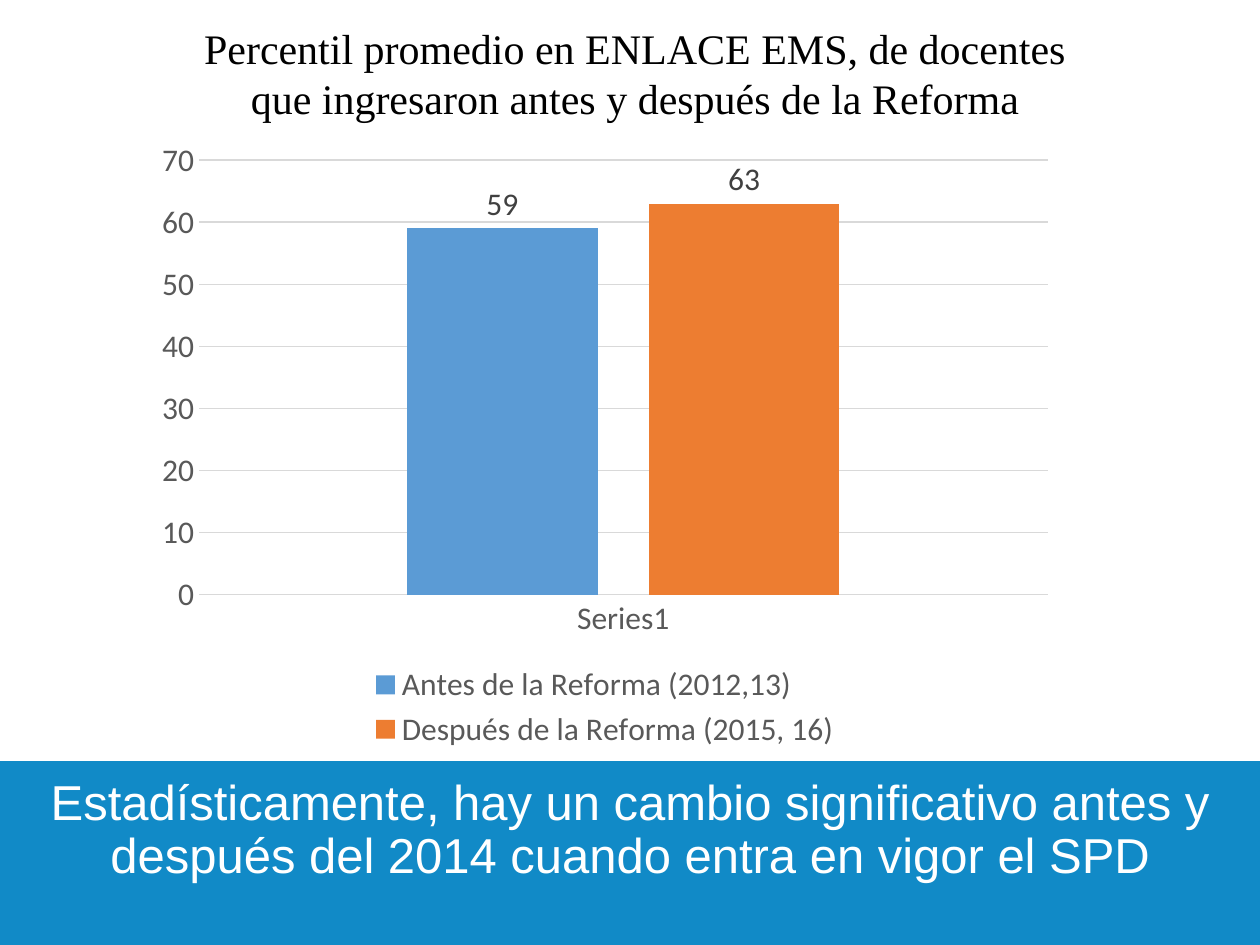
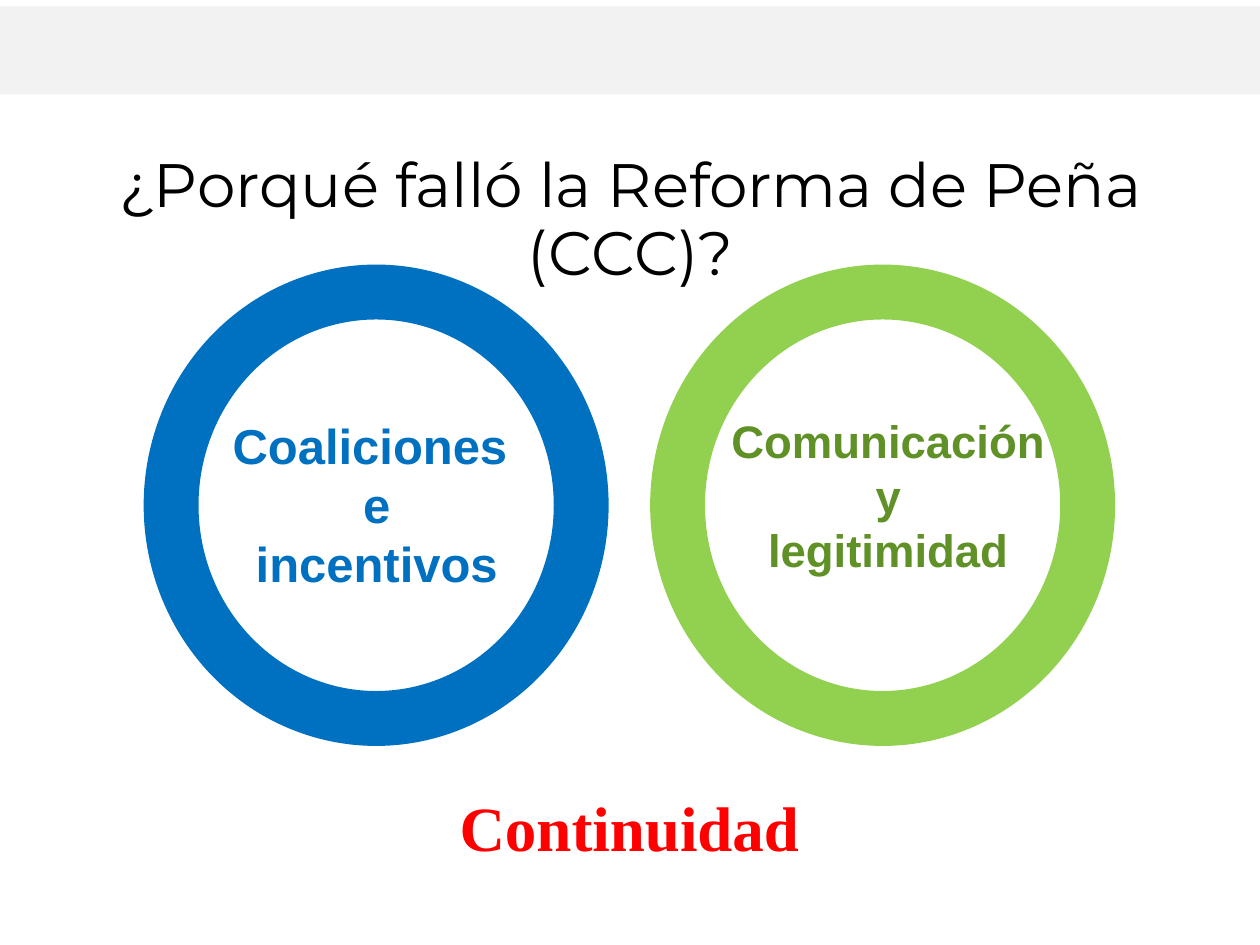
from dataclasses import dataclass

from pptx import Presentation
from pptx.chart.data import CategoryChartData
from pptx.dml.color import RGBColor
from pptx.enum.chart import XL_CHART_TYPE as ChartType
from pptx.enum.chart import XL_LABEL_POSITION as LabelPosition
from pptx.enum.chart import XL_LEGEND_POSITION as LegendPosition
from pptx.enum.chart import XL_TICK_MARK as TickMark
from pptx.enum.shapes import MSO_SHAPE as ShapeKind
from pptx.enum.text import MSO_AUTO_SIZE as AutoSize
from pptx.enum.text import PP_ALIGN as Align
from pptx.util import Inches, Pt

WHITE, BLACK, RED = "FFFFFF", "000000", "FF0000"
BAND_BLUE, BAND_GREY = "118AC7", "F2F2F2"
RING_BLUE, RING_GREEN, TEXT_GREEN = "0070C0", "92D050", "5F9127"
AXIS_TEXT, LABEL_TEXT, GRID = "595959", "404040", "D9D9D9"
SANS, SERIF, DISPLAY, CHART_FONT = "Arial", "Times New Roman", "Montserrat", "Calibri"
RING_TOP, RING_WIDTH, RING_HEIGHT, RING_BORE = 2.1, 3.69, 3.82, 0.118


@dataclass(frozen=True)
class Caption:
    """A centred text box with one style."""
    text: str
    left: float
    top: float
    width: float
    height: float
    size: float
    font: str
    color: str
    bold: bool = False
    spacing: float | Pt | None = None


@dataclass(frozen=True)
class Band:
    """A full-width strip."""
    top: float
    height: float
    color: str


@dataclass(frozen=True)
class Ring:
    """A donut with the caption inside it."""
    left: float
    color: str
    caption: Caption


@dataclass(frozen=True)
class Bar:
    """A chart series with a single value."""
    name: str
    value: int
    color: str


BARS = (
    Bar("Antes de la Reforma (2012,13)", 59, "5B9BD5"),
    Bar("Después de la Reforma (2015, 16)", 63, "ED7D31"),
)
CHART_TITLE = Caption(
    "Percentil promedio en ENLACE EMS, de docentes que ingresaron antes y después de la Reforma",
    1.38, 0.13, 7.32, 0.91, 24, SERIF, BLACK)
CONCLUSION = Caption(
    "Estadísticamente, hay un cambio significativo antes y después del 2014 cuando entra en vigor el SPD",
    0, 6.13, 10, 0.95, 28, SANS, WHITE, spacing=0.9)
QUESTION = Caption("¿Porqué falló la Reforma de Peña (CCC)?",
                   0.46, 1.15, 9.09, 0.65, 35, DISPLAY, BLACK, spacing=Pt(39))
CONTINUITY = Caption("Continuidad", 2.83, 6.21, 4.33, 0.71, 36, SERIF, RED, True)
RINGS = (
    Ring(1.14, RING_BLUE, Caption("Coaliciones \ne\nincentivos",
                                  1.67, 3.25, 2.64, 1.51, 28, SANS, RING_BLUE, True)),
    Ring(5.16, RING_GREEN, Caption("Comunicación\ny\nlegitimidad",
                                   5.35, 3.23, 3.4, 1.41, 26, SANS, TEXT_GREEN, True)),
)


def rgb(color: str) -> RGBColor:
    """Turn a hex string into a colour."""
    return RGBColor.from_string(color)


def style_font(font, name: str, size: float, color: str, bold: bool = False) -> None:
    """Set the face, size, colour and weight of a font."""
    font.name = name
    font.size = Pt(size)
    font.bold = bold
    font.color.rgb = rgb(color)


def add_filled(page, kind, left: float, top: float, width: float, height: float, color: str):
    """Add a flat preset shape without an outline."""
    shape = page.shapes.add_shape(kind, Inches(left), Inches(top), Inches(width), Inches(height))
    shape.shadow.inherit = False
    shape.fill.solid()
    shape.fill.fore_color.rgb = rgb(color)
    shape.line.fill.background()
    return shape


def add_band(page, band: Band) -> None:
    """Draw a strip across the page."""
    add_filled(page, ShapeKind.RECTANGLE, 0, band.top, 10, band.height, band.color)


def add_caption(page, caption: Caption) -> None:
    """Draw a centred, wrapping text box."""
    box = page.shapes.add_textbox(Inches(caption.left), Inches(caption.top),
                                  Inches(caption.width), Inches(caption.height))
    frame = box.text_frame
    frame.word_wrap = True
    frame.auto_size = AutoSize.SHAPE_TO_FIT_TEXT
    frame.text = caption.text
    for para in frame.paragraphs:
        para.alignment = Align.CENTER
        para.line_spacing = caption.spacing
        for span in para.runs:
            style_font(span.font, caption.font, caption.size, caption.color, caption.bold)


def add_ring(page, ring: Ring) -> None:
    """Draw a donut and its caption."""
    donut = add_filled(page, ShapeKind.DONUT, ring.left, RING_TOP, RING_WIDTH, RING_HEIGHT, ring.color)
    donut.adjustments[0] = RING_BORE
    add_caption(page, ring.caption)


def style_axis(axis) -> None:
    """Give an axis its text style and remove its ticks."""
    axis.major_tick_mark = axis.minor_tick_mark = TickMark.NONE
    style_font(axis.tick_labels.font, CHART_FONT, 18, AXIS_TEXT)


def style_line(line) -> None:
    """Apply the thin grey chart line."""
    line.color.rgb = rgb(GRID)
    line.width = Pt(0.75)


def add_percentile_chart(page) -> None:
    """Draw the column chart of average percentiles."""
    data = CategoryChartData()
    data.categories = ["Series1"]
    for bar in BARS:
        data.add_series(bar.name, [bar.value])
    chart = page.shapes.add_chart(ChartType.COLUMN_CLUSTERED, Inches(1.14), Inches(1.02),
                                  Inches(7.32), Inches(4.97), data).chart
    style_font(chart.font, CHART_FONT, 18, BLACK)
    chart.has_title = False
    chart.has_legend = True
    chart.legend.position = LegendPosition.BOTTOM
    chart.legend.include_in_layout = False
    style_font(chart.legend.font, CHART_FONT, 18, AXIS_TEXT)

    style_axis(chart.category_axis)
    style_line(chart.category_axis.format.line)
    values = chart.value_axis
    style_axis(values)
    values.minimum_scale, values.maximum_scale, values.major_unit = 0, 70, 10
    values.format.line.fill.background()
    style_line(values.major_gridlines.format.line)

    plot = chart.plots[0]
    plot.gap_width, plot.overlap = 219, -27
    plot.vary_by_categories = False
    for series, bar in zip(plot.series, BARS):
        series.format.fill.solid()
        series.format.fill.fore_color.rgb = rgb(bar.color)
        labels = series.data_labels
        labels.show_value = True
        labels.position = LabelPosition.OUTSIDE_END
        style_font(labels.font, CHART_FONT, 18, LABEL_TEXT)


def build_results(page) -> None:
    """Build the page on percentiles before and after the reform."""
    add_band(page, Band(6.04, 1.47, BAND_BLUE))
    add_caption(page, CONCLUSION)
    add_percentile_chart(page)
    add_caption(page, CHART_TITLE)


def build_reasons(page) -> None:
    """Build the page on why the reform failed."""
    add_band(page, Band(0.05, 0.7, BAND_GREY))
    add_caption(page, QUESTION)
    for ring in RINGS:
        add_ring(page, ring)
    add_caption(page, CONTINUITY)


def main() -> None:
    """Build and save the deck."""
    deck = Presentation()
    deck.slide_width, deck.slide_height = Inches(10), Inches(7.5)
    for build in (build_results, build_reasons):
        page = deck.slides.add_slide(deck.slide_layouts[6])
        page.background.fill.solid()
        page.background.fill.fore_color.rgb = rgb(WHITE)
        build(page)
    deck.save("out.pptx")


if __name__ == "__main__":
    main()
